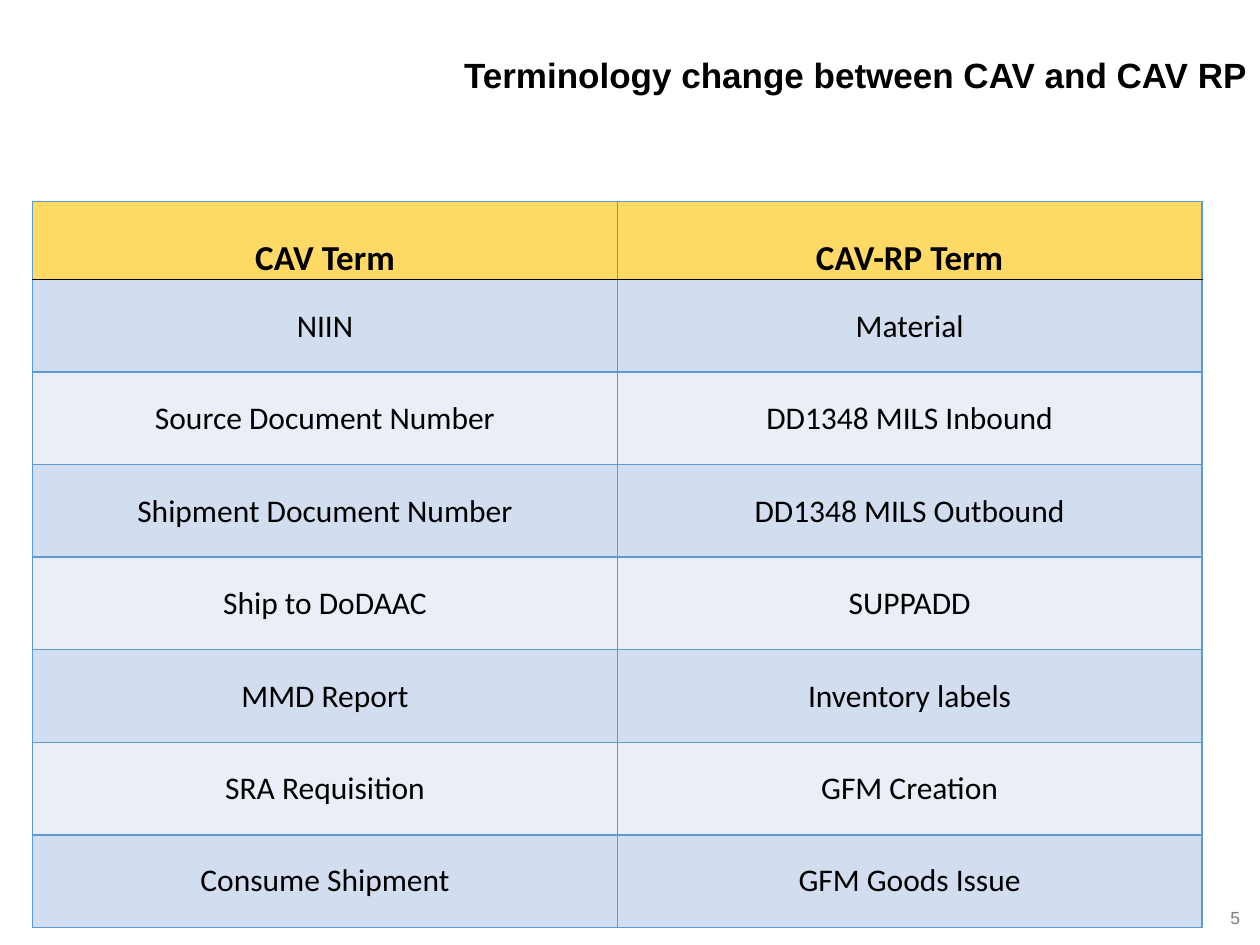
from dataclasses import dataclass

from lxml import etree
from pptx import Presentation
from pptx import util as u
from pptx.dml.color import RGBColor
from pptx.enum import text
from pptx.oxml.ns import qn

BLACK = RGBColor(0x00, 0x00, 0x00)
GRAY = RGBColor(0x7F, 0x7F, 0x7F)
GOLD = RGBColor(0xFF, 0xD9, 0x66)
BLUE = RGBColor(0x5B, 0x9B, 0xD5)
BAND_DARK = RGBColor(0xD2, 0xDE, 0xEF)
BAND_LIGHT = RGBColor(0xEA, 0xEF, 0xF7)

TERMS = [
    ("CAV Term", "CAV-RP Term"),
    ("NIIN", "Material"),
    ("Source Document Number", "DD1348 MILS Inbound"),
    ("Shipment Document Number", "DD1348 MILS Outbound"),
    ("Ship to DoDAAC", "SUPPADD"),
    ("MMD Report", "Inventory labels"),
    ("SRA Requisition", "GFM Creation"),
    ("Consume Shipment", "GFM Goods Issue"),
]

TITLE_FONT = {"name": "Arial", "size": u.Pt(20), "bold": True}
HEADER_FONT = {"name": "Calibri", "size": u.Pt(20), "bold": True}
TERM_FONT = {"name": "Calibri", "size": u.Pt(18), "bold": False}
NUMBER_FONT = {"name": "Arial", "size": u.Pt(10), "bold": False}
FRAME = {
    "word_wrap": True,
    "auto_size": text.MSO_AUTO_SIZE.NONE,
    "vertical_anchor": text.MSO_ANCHOR.TOP,
}
CELL_MARGINS = {
    "margin_left": u.Inches(0.01),
    "margin_right": u.Inches(0.01),
    "margin_top": u.Inches(0.01),
    "margin_bottom": 0,
}


@dataclass
class Box:
    left: float
    top: float
    width: float
    height: float

    def place(self):
        return [u.Inches(v) for v in (self.left, self.top, self.width, self.height)]


def apply(target, values):
    for name, value in values.items():
        setattr(target, name, value)


def write(frame, words, align, font, color):
    frame.text = words
    paragraph = frame.paragraphs[0]
    paragraph.alignment = align
    run_font = paragraph.runs[0].font
    apply(run_font, font)
    run_font.color.rgb = color
    return paragraph


def add_title(slide, box):
    heading = slide.shapes.title
    apply(heading, dict(zip(("left", "top", "width", "height"), box.place())))
    apply(heading.text_frame, FRAME)
    line = write(heading.text_frame, "Terminology change between CAV and CAV RP",
                 text.PP_ALIGN.RIGHT, TITLE_FONT, BLACK)
    apply(line, {"line_spacing": u.Pt(16.5), "space_before": u.Pt(0)})


def add_page_number(slide, box):
    number = slide.shapes.add_textbox(*box.place())
    apply(number.text_frame, FRAME)
    write(number.text_frame, "5", text.PP_ALIGN.RIGHT, NUMBER_FONT, GRAY)


def set_borders(cell, colors):
    properties = cell._tc.get_or_add_tcPr()
    for position, (side, color) in enumerate(colors.items()):
        line = etree.Element(qn(f"a:ln{side}"), w=str(u.Pt(1)))
        fill = etree.SubElement(line, qn("a:solidFill"))
        etree.SubElement(fill, qn("a:srgbClr"), val=str(color))
        properties.insert(position, line)


def add_terms_table(slide, box, header_height):
    rows, columns = len(TERMS), len(TERMS[0])
    table = slide.shapes.add_table(rows, columns, *box.place()).table
    term_height = (box.height - header_height) / (rows - 1)
    for column in table.columns:
        column.width = u.Inches(box.width / columns)
    for r, terms in enumerate(TERMS):
        is_header = r == 0
        table.rows[r].height = u.Inches(header_height if is_header else term_height)
        band = GOLD if is_header else BAND_DARK if r % 2 else BAND_LIGHT
        borders = {"L": BLUE, "R": BLUE,
                   "T": BLACK if r == 1 else BLUE,
                   "B": BLACK if is_header else BLUE}
        for c, term in enumerate(terms):
            cell = table.cell(r, c)
            cell.fill.solid()
            cell.fill.fore_color.rgb = band
            cell.vertical_anchor = text.MSO_ANCHOR.BOTTOM if is_header else text.MSO_ANCHOR.MIDDLE
            if r < rows - 2:
                apply(cell, CELL_MARGINS)
            set_borders(cell, borders)
            write(cell.text_frame, term, text.PP_ALIGN.CENTER,
                  HEADER_FONT if is_header else TERM_FONT, BLACK)


def main():
    deck = Presentation()
    apply(deck, {"slide_width": u.Inches(10), "slide_height": u.Inches(7.5)})
    slide = deck.slides.add_slide(deck.slide_layouts[5])
    add_page_number(slide, Box(9.44, 7.15, 0.5, 0.27))
    add_title(slide, Box(3.53, 0.48, 6.47, 0.36))
    add_terms_table(slide, Box(0.26, 1.6, 9.28, 5.76), header_height=0.62)
    deck.save("out.pptx")


if __name__ == "__main__":
    main()
